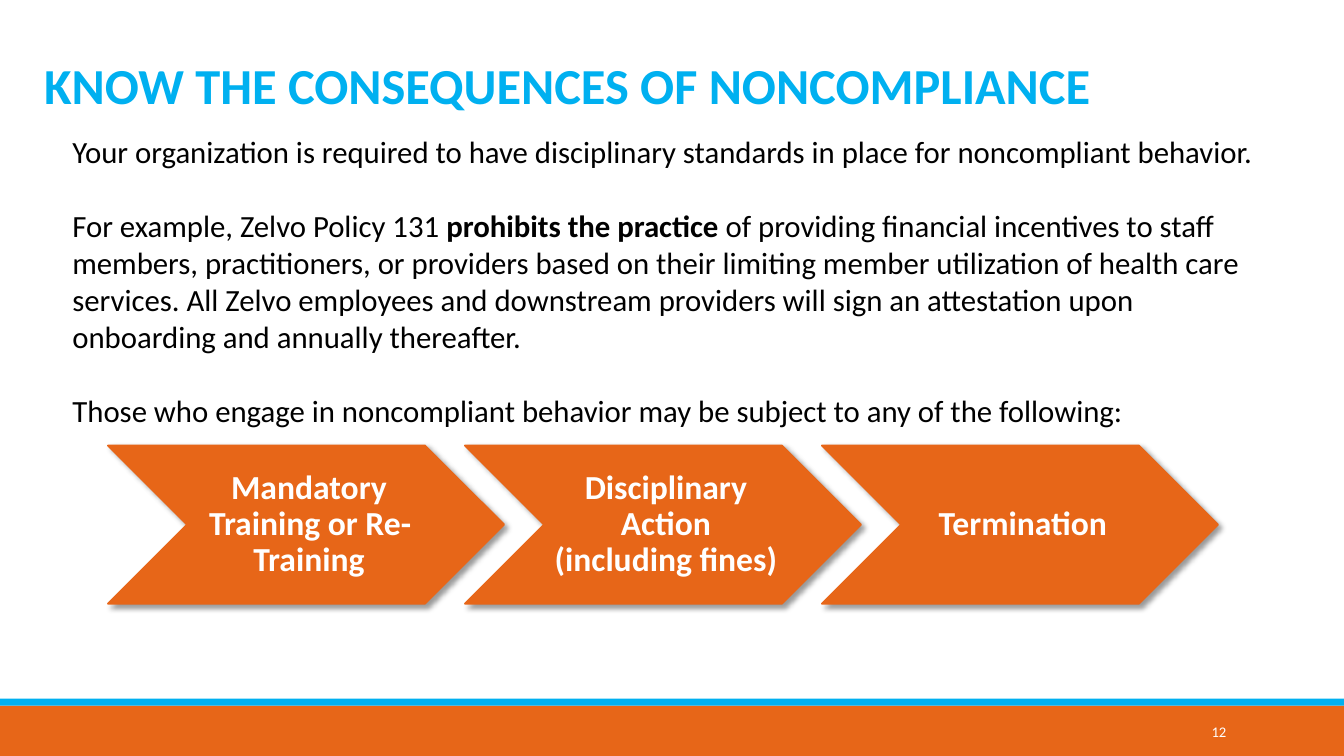
from lxml import etree
from pptx import Presentation
from pptx.dml.color import RGBColor
from pptx.enum.shapes import MSO_SHAPE as Shape
from pptx.enum.text import MSO_ANCHOR as Anchor, MSO_AUTO_SIZE as AutoSize, PP_ALIGN as Align
from pptx.oxml import parse_xml
from pptx.util import Inches, Pt

ORANGE = RGBColor(0xE7, 0x66, 0x18)
BLUE = RGBColor(0x00, 0xB0, 0xF0)
BLACK = RGBColor(0x00, 0x00, 0x00)
WHITE = RGBColor(0xFF, 0xFF, 0xFF)

FONT = "Calibri"
WIDTH, HEIGHT = Inches(13.33), Inches(7.5)

# Chevron row, in percent of the slide's size
STEP_LEFT, STEP_TOP, STEP_WIDTH, STEP_HEIGHT = 8.03, 58.93, 29.48, 20.93
STEP_PITCH = 26.56
STEPS = [
    "Mandatory Training or Re-Training",
    "Disciplinary Action (including fines)",
    "Termination",
]

# Each paragraph is a list of (text, bold) runs
BODY = [
    [("Your organization is required to have disciplinary standards in place "
      "for noncompliant behavior.", False)],
    [("For example, Zelvo Policy 131 ", False),
     ("prohibits the practice ", True),
     ("of providing financial incentives to staff members, practitioners, or "
      "providers based on their limiting member utilization of health care "
      "services. All Zelvo employees and downstream providers will sign an "
      "attestation upon onboarding and annually thereafter.", False)],
    [("Those who engage in noncompliant behavior may be subject to any of the "
      "following:", False)],
]

SHADOW = """
<a:effectLst xmlns:a="http://schemas.openxmlformats.org/drawingml/2006/main">
  <a:outerShdw blurRad="50800" dist="38100" dir="2700000" rotWithShape="0">
    <a:srgbClr val="000000"><a:alpha val="40000"/></a:srgbClr>
  </a:outerShdw>
</a:effectLst>"""


def area(left, top, width, height):
    """Turn percentages of the slide into lengths."""
    return [round(size * share / 100) for size, share in
            ((WIDTH, left), (HEIGHT, top), (WIDTH, width), (HEIGHT, height))]


def set_all(target, values):
    for name, value in values.items():
        setattr(target, name, value)


def write(tf, paragraphs, size, color, frame=None, **para_format):
    set_all(tf, {"word_wrap": True, **(frame or {})})
    for i, runs in enumerate(paragraphs):
        p = tf.add_paragraph() if i else tf.paragraphs[0]
        set_all(p, para_format)
        for text, bold in runs:
            r = p.add_run()
            r.text = text
            set_all(r.font, {"name": FONT, "size": Pt(size), "bold": bold})
            r.font.color.rgb = color


def add_text(slide, box, paragraphs, size, color, frame=None, **para_format):
    sp = slide.shapes.add_textbox(*area(*box))
    write(sp.text_frame, paragraphs, size, color, frame, **para_format)


def add_filled(slide, kind, box, color):
    sp = slide.shapes.add_shape(kind, *area(*box))
    sp.shadow.inherit = False
    sp.fill.solid()
    sp.fill.fore_color.rgb = color
    sp.line.fill.background()
    return sp


def add_step(slide, index, label):
    box = (STEP_LEFT + index * STEP_PITCH, STEP_TOP, STEP_WIDTH, STEP_HEIGHT)
    sp = add_filled(slide, Shape.CHEVRON, box, ORANGE)
    sp.line.color.rgb = ORANGE
    sp.line.width = Pt(1.25)
    # Swap the empty effect list for a soft shadow
    sp_pr = sp.element.spPr
    effects = sp_pr.find("{*}effectLst")
    sp_pr.replace(effects, parse_xml(etree.tostring(etree.fromstring(SHADOW))))
    frame = {"vertical_anchor": Anchor.MIDDLE, "margin_left": Inches(0.1)}
    frame.update({f"margin_{side}": Inches(0.04)
                  for side in ("top", "right", "bottom")})
    write(sp.text_frame, [[(label, True)]], 24, WHITE, frame,
          alignment=Align.CENTER, line_spacing=0.9)


def main():
    prs = Presentation()
    set_all(prs, {"slide_width": WIDTH, "slide_height": HEIGHT})
    slide = prs.slides.add_slide(prs.slide_layouts[6])

    # Footer bands
    add_filled(slide, Shape.RECTANGLE, (0, 93.33, 100, 6.67), ORANGE)
    add_filled(slide, Shape.RECTANGLE, (0, 92.4, 100, 0.93), BLUE)

    # Title
    add_text(slide, (2.55, 6.53, 80.2, 9.47),
             [[("KNOW THE CONSEQUENCES OF NONCOMPLIANCE", True)]], 36, BLUE,
             {"word_wrap": False, "auto_size": AutoSize.SHAPE_TO_FIT_TEXT})

    # Consequences
    for index, label in enumerate(STEPS):
        add_step(slide, index, label)

    # Body text
    add_text(slide, (4.65, 16.93, 90.7, 40.8), BODY, 22, BLACK,
             space_after=Pt(26.5))

    # Page number
    add_text(slide, (81.25, 94.13, 10.73, 5.33), [[("12", False)]], 10.5, WHITE,
             {"vertical_anchor": Anchor.MIDDLE}, alignment=Align.RIGHT)

    prs.save("out.pptx")


if __name__ == "__main__":
    main()
